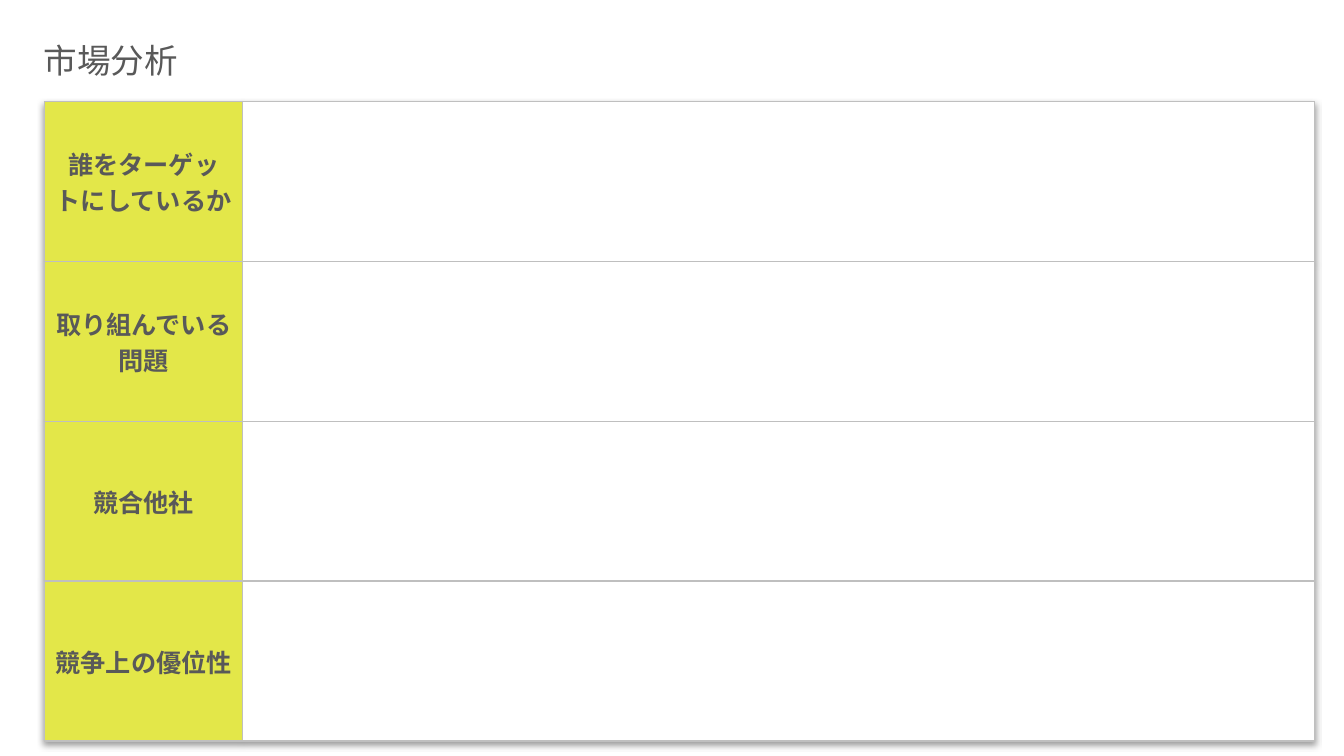
from dataclasses import dataclass

from lxml.etree import SubElement
from pptx import Presentation
from pptx.dml.color import RGBColor as Rgb
from pptx.enum.text import MSO_ANCHOR as Anchor, MSO_AUTO_SIZE as AutoSize, PP_ALIGN as Align
from pptx.oxml import parse_xml
from pptx.oxml.ns import nsdecls, qn
from pptx.slide import Slide
from pptx.table import _Cell as Cell
from pptx.text.text import Font
from pptx.util import Pt


@dataclass(frozen=True)
class Theme:
    font: str = "League Spartan"
    ink: str = "595959"
    label_fill: str = "E3E749"
    answer_fill: str = "FFFFFF"
    rule: str = "BFBFBF"
    rule_width: float = 1
    title_size: float = 24
    label_size: float = 18


@dataclass(frozen=True)
class Box:
    left: float
    top: float
    width: float
    height: float

    def lengths(self) -> tuple[Pt, Pt, Pt, Pt]:
        return Pt(self.left), Pt(self.top), Pt(self.width), Pt(self.height)


@dataclass(frozen=True)
class Topic:
    label: str


THEME = Theme()
TITLE_BOX = Box(24, 25, 582, 36)
ANALYSIS_BOX = Box(31.7, 72.5, 907.4, 456.8)
LABEL_WIDTH = 141.8
TOPICS = [
    Topic("誰をターゲッ\vトにしているか"),
    Topic("取り組んでいる問題"),
    Topic("競合他社"),
    Topic("競争上の優位性"),
]


def apply_format(target: object, values: dict[str, object]) -> None:
    for name, value in values.items():
        setattr(target, name, value)


def format_font(font: Font, size: float, bold: bool) -> None:
    apply_format(font, {"name": THEME.font, "size": Pt(size), "bold": bold})
    font.color.rgb = Rgb.from_string(THEME.ink)


def add_title(slide: Slide, wording: str) -> None:
    title = slide.shapes.title
    left, top, width, height = TITLE_BOX.lengths()
    apply_format(title, {"left": left, "top": top, "width": width, "height": height})
    title.text_frame.text = wording
    apply_format(title.text_frame, {
        "word_wrap": True,
        "auto_size": AutoSize.SHAPE_TO_FIT_TEXT,
        "vertical_anchor": Anchor.TOP,
    })
    heading = title.text_frame.paragraphs[0]
    heading.alignment = Align.LEFT
    format_font(heading.runs[0].font, THEME.title_size, False)


def format_cell(cell: Cell, fill: str) -> None:
    properties = cell._tc.get_or_add_tcPr()
    for side in ("lnL", "lnR", "lnT", "lnB"):
        border = SubElement(properties, qn(f"a:{side}"), w=str(Pt(THEME.rule_width)))
        solid = SubElement(border, qn("a:solidFill"))
        SubElement(solid, qn("a:srgbClr"), val=THEME.rule)
    cell.fill.solid()
    cell.fill.fore_color.rgb = Rgb.from_string(fill)
    cell.vertical_anchor = Anchor.MIDDLE


def add_analysis(slide: Slide, topics: list[Topic]) -> None:
    analysis = slide.shapes.add_table(len(topics), 2, *ANALYSIS_BOX.lengths()).table
    apply_format(analysis, {"first_row": False, "horz_banding": False})
    analysis._tbl.tblPr.insert(0, parse_xml(
        f'<a:effectLst {nsdecls("a")}>'
        f'<a:outerShdw blurRad="{Pt(4)}" dist="{Pt(3)}" dir="5400000" algn="t" rotWithShape="0">'
        '<a:prstClr val="black"><a:alpha val="40000"/></a:prstClr>'
        '</a:outerShdw></a:effectLst>'
    ))
    analysis.columns[0].width = Pt(LABEL_WIDTH)
    analysis.columns[1].width = Pt(ANALYSIS_BOX.width - LABEL_WIDTH)
    for index, topic in enumerate(topics):
        analysis.rows[index].height = Pt(ANALYSIS_BOX.height / len(topics))
        label, answer = analysis.cell(index, 0), analysis.cell(index, 1)
        format_cell(label, THEME.label_fill)
        format_cell(answer, THEME.answer_fill)
        label.text = topic.label
        caption = label.text_frame.paragraphs[0]
        caption.alignment = Align.CENTER
        for run in caption.runs:
            format_font(run.font, THEME.label_size, True)


def main() -> None:
    deck = Presentation()
    apply_format(deck, {"slide_width": Pt(960), "slide_height": Pt(540)})
    slide = deck.slides.add_slide(deck.slide_layouts[5])
    add_title(slide, "市場分析")
    add_analysis(slide, TOPICS)
    deck.save("out.pptx")


if __name__ == "__main__":
    main()
